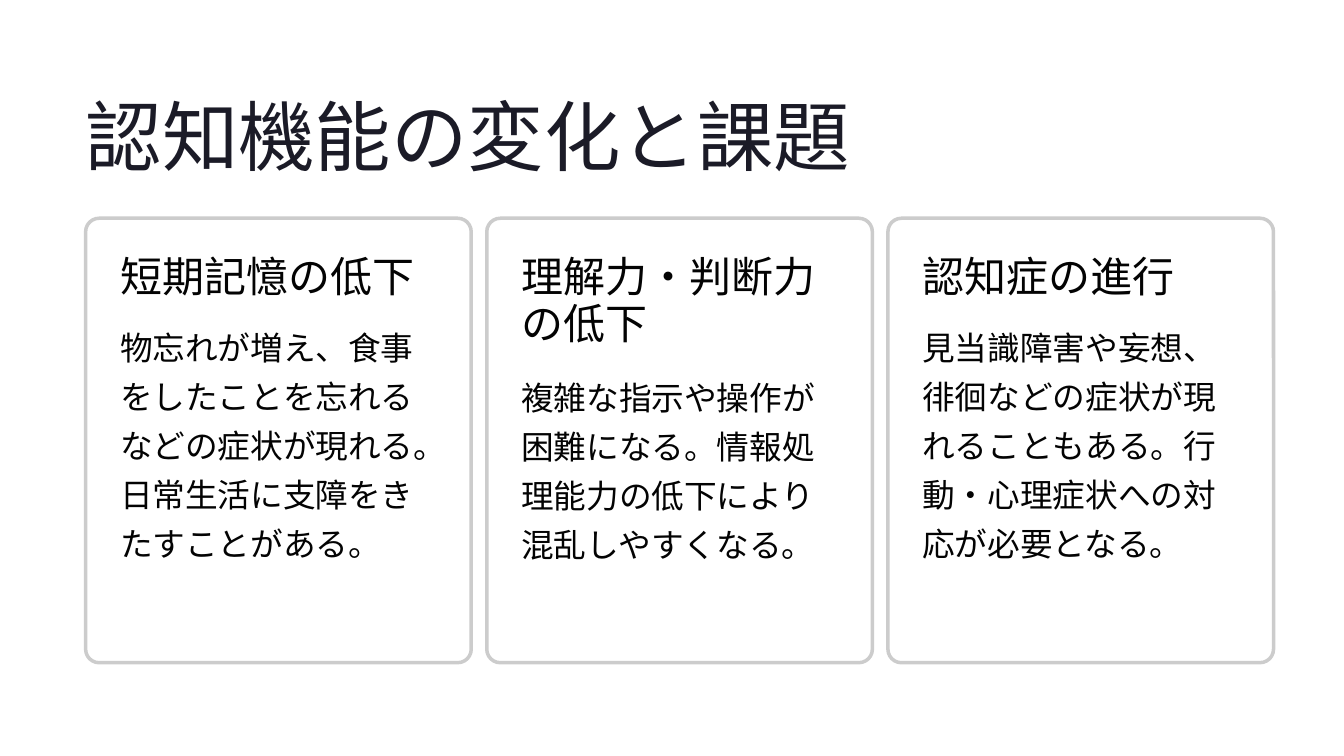
from lxml.etree import SubElement
from pptx import Presentation
from pptx.dml.color import RGBColor
from pptx.enum.shapes import MSO_SHAPE as Shape
from pptx.enum.text import MSO_ANCHOR as Anchor
from pptx.oxml.ns import qn
from pptx.util import Cm, Pt

COLORS = {"title": "1B1B27", "text": "030303", "card": "FFFFFF", "border": "CCCCCC"}

CARDS = [
    ("短期記憶の低下", 1.5, 9.22,
     "物忘れが増え、食事をしたことを忘れるなどの症状が現れる。日常生活に支障をきたすことがある。"),
    ("理解力・判断力の低下", 3, 6.15,
     "複雑な指示や操作が困難になる。情報処理能力の低下により混乱しやすくなる。"),
    ("認知症の進行", 1.5, 7.7,
     "見当識障害や妄想、徘徊などの症状が現れることもある。行動・心理症状への対応が必要となる。"),
]

LEFT, CARD_TOP = 2.59, 6.6
CARD_WIDTH, CARD_HEIGHT, CARD_STEP = 11.66, 13.44, 12.13
PADDING, HEADING_GAP = 1.04, 0.48
TEXT_WIDTH = 9.5

deck = Presentation()
deck.slide_width, deck.slide_height = Cm(40.64), Cm(22.86)
page = deck.slides.add_slide(deck.slide_layouts[6])


def add_text(text, left, top, width, height, font, size, spacing, color):
    box = page.shapes.add_textbox(Cm(left), Cm(top), Cm(width), Cm(height))
    frame = box.text_frame
    frame.word_wrap = True
    frame.vertical_anchor = Anchor.TOP
    frame.margin_left = frame.margin_right = frame.margin_top = frame.margin_bottom = 0
    para = frame.paragraphs[0]
    para.text = text
    para.line_spacing = Pt(spacing)
    para.font.name = font
    para.font.size = Pt(size)
    para.font.color.rgb = RGBColor.from_string(COLORS[color])


add_text("認知機能の変化と課題", LEFT, 2.57, 23.2, 2.9, "Inter", 65.5, 82, "title")

for index, (heading, heading_height, body_height, body) in enumerate(CARDS):
    left = LEFT + index * CARD_STEP
    card = page.shapes.add_shape(
        Shape.ROUNDED_RECTANGLE, Cm(left), Cm(CARD_TOP), Cm(CARD_WIDTH), Cm(CARD_HEIGHT))
    card.adjustments[0] = 0.035
    card.shadow.inherit = False
    card.fill.solid()
    card.fill.fore_color.rgb = RGBColor.from_string(COLORS["card"])
    fill_color = card.fill._xPr.find(qn("a:solidFill"))[0]
    SubElement(fill_color, qn("a:alpha"), val="95000")
    card.line.color.rgb = RGBColor.from_string(COLORS["border"])
    card.line.width = Pt(3)

    heading_top = CARD_TOP + PADDING
    body_top = heading_top + heading_height + HEADING_GAP
    add_text(heading, left + PADDING, heading_top, TEXT_WIDTH, heading_height,
             "Inter", 36, 41, "text")
    add_text(body, left + PADDING, body_top, TEXT_WIDTH, body_height,
             "Lato", 28, 42, "text")

deck.save("out.pptx")
